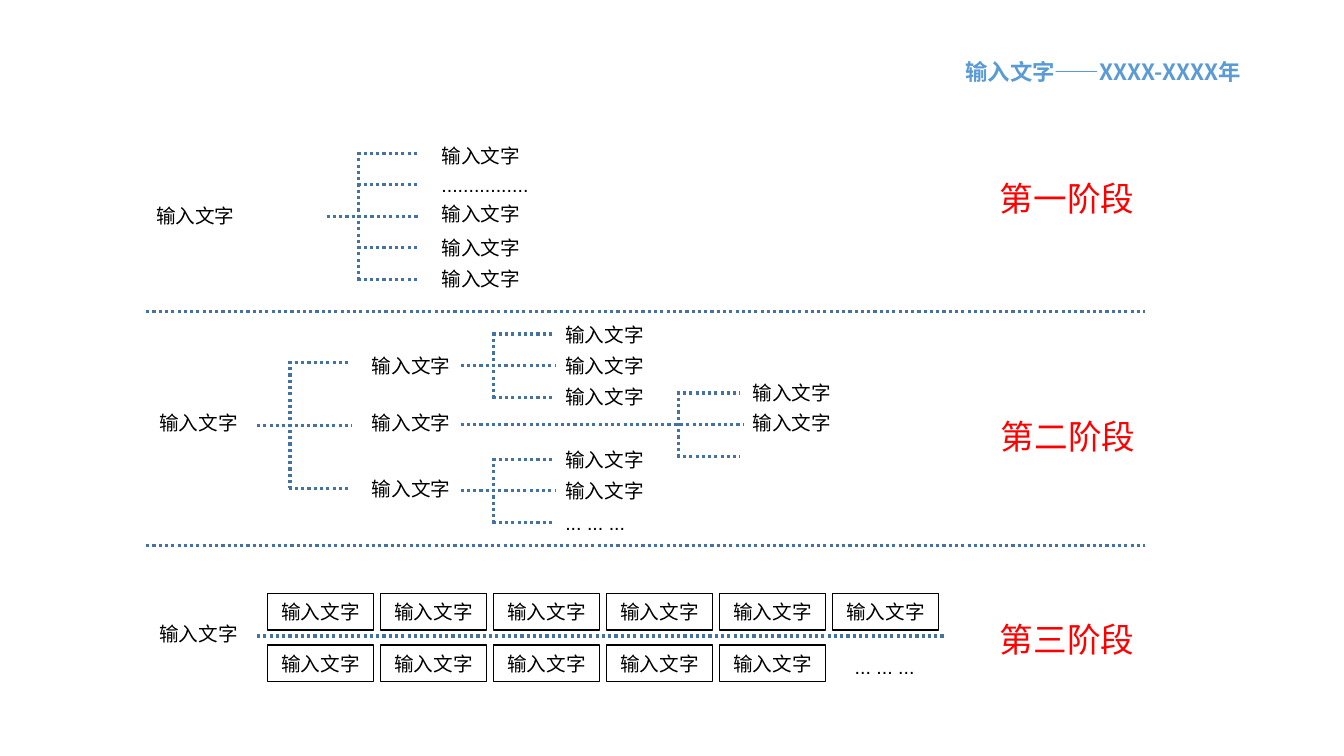
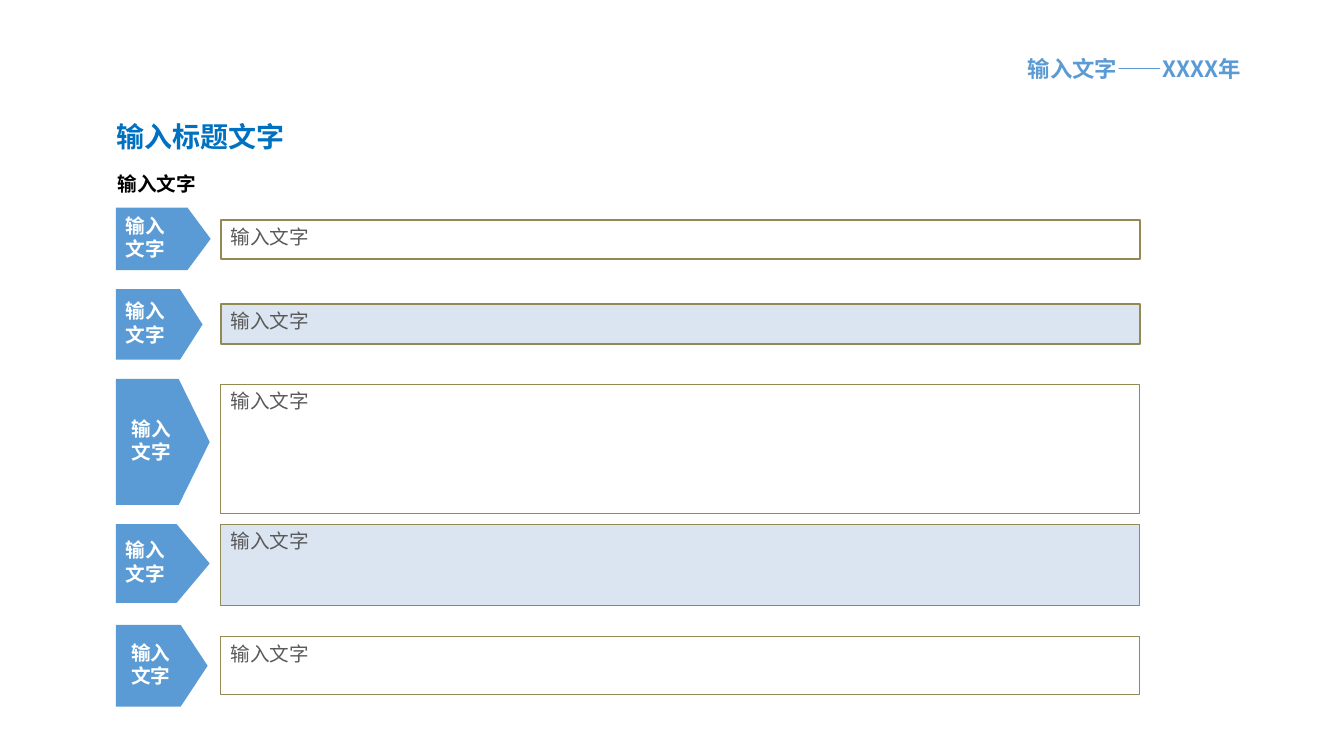
from dataclasses import dataclass
from lxml.etree import SubElement
from pptx import Presentation
from pptx.dml.color import RGBColor
from pptx.enum.dml import MSO_LINE
from pptx.enum.shapes import MSO_CONNECTOR, MSO_SHAPE
from pptx.enum.text import MSO_ANCHOR, MSO_AUTO_SIZE, PP_ALIGN
from pptx.oxml.ns import qn
from pptx.util import Pt


@dataclass(frozen=True)
class Style:
    size: int
    color: str
    font: str = "Noto Sans CJK SC"
    bold: bool = False


@dataclass(frozen=True)
class Theme:
    east_asian: str = "Noto Sans CJK SC"
    header: Style = Style(16, "5B9BD5", bold=True)
    title: Style = Style(20, "0070C0", bold=True)
    subtitle: Style = Style(14, "000000", bold=True)
    label: Style = Style(14, "000000", "Arial")
    stage: Style = Style(24, "FF0000", "Noto Sans CJK JP")
    step: Style = Style(14, "FFFFFF", bold=True)
    detail: Style = Style(14, "595959")
    dotted: str = "43739E"
    frame: str = "000000"
    arrow: str = "5B9BD5"
    border: str = "938953"
    white: str = "FFFFFF"
    tint: str = "DAE5F1"


THEME = Theme()
WORD = "输入文字"
ELLIPSIS = "... ... ..."
LINE_HEIGHT = 24.5

STAGES = [("第一阶段", 671, 109.4), ("第二阶段", 671.8, 279.4), ("第三阶段", 671, 424.1)]
STAGE_WIDTH, STAGE_HEIGHT, STAGE_INSET = 152, 51.1, 43.2
RULES = [(104.4, 817.9, 222.5), (104.4, 817.9, 389.5), (183.6, 675.4, 454.3)]

BRACKET_PARTS = ("start", "end", "middle", "spine", "offsets")
BRACKETS = [dict(zip(BRACKET_PARTS, values)) for values in [
    (233.3, 300, 154.6, 256.3, (-45, -22.5, 22.5, 45)),
    (183.6, 251.3, 303.8, 207.2, (-45, 45)),
    (329, 396.7, 261.2, 352.8, (-22.6, 22.6)),
    (329, 396.7, 350.6, 352.8, (-22.6, 22.6)),
    (329, 530.6, 303.3, 484.4, (-22.6, 22.6)),
]]
LABELS = [
    (104.4, [(141.8, WORD)]),
    (308.2, [(99.4, WORD), (120.2, "................"), (140.4, WORD),
             (164.9, WORD), (187.2, WORD)]),
    (106.6, [(290.2, WORD), (440.6, WORD)]),
    (258.5, [(249.1, WORD), (290.2, WORD), (337, WORD)]),
    (396.7, [(226.8, WORD), (249.1, WORD), (271.4, WORD),
             (316.1, WORD), (338.4, WORD), (361.4, ELLIPSIS)]),
    (530.6, [(268.6, WORD), (290.2, WORD)]),
    (603.4, [(464.4, ELLIPSIS)]),
]
LABEL_WIDTHS = {WORD: 70.6, ELLIPSIS: 57.6}
BOX_ROWS = [(424.1, [WORD] * 6), (460.8, [WORD] * 5)]
BOX_LEFT, BOX_PITCH, BOX_WIDTH, BOX_HEIGHT = 191.2, 80.7, 75.6, 25.9

STEPS = [
    {"arrow": (148.3, 67.7, 44.6), "point": 0.37, "inset": 7.2,
     "panel": (157, 28.1), "fill": THEME.white, "weight": 1.5},
    {"arrow": (206.6, 61.9, 50.4), "point": 0.32, "inset": 7.2,
     "panel": (217.4, 28.1), "fill": THEME.tint, "weight": 1.5},
    {"arrow": (270.7, 67, 90), "point": 0.33, "inset": 11.5,
     "panel": (274.3, 92.2), "fill": THEME.white, "weight": 0.75},
    {"arrow": (374.4, 67, 56.2), "point": 0.42, "inset": 7.2,
     "panel": (374.4, 58.3), "fill": THEME.tint, "weight": 0.75},
    {"arrow": (446.4, 65.5, 58.3), "point": 0.33, "inset": 10.8,
     "panel": (455, 41), "fill": THEME.white, "weight": 0.75},
]
ARROW_LEFT, PANEL_LEFT, PANEL_WIDTH = 82.8, 157.7, 656.6


def rgb(value):
    return RGBColor.from_string(value)


def write(frame, text, style, align=PP_ALIGN.LEFT):
    paragraph = frame.paragraphs[0]
    paragraph.text = text
    paragraph.alignment = align
    font = paragraph.font
    font.size, font.bold, font.name = Pt(style.size), style.bold, style.font
    font.color.rgb = rgb(style.color)
    defaults = paragraph._p.pPr.find(qn("a:defRPr"))
    SubElement(defaults, qn("a:ea")).set("typeface", THEME.east_asian)


def add_text(slide, text, left, top, width, height, style, wrap=False):
    frame = slide.shapes.add_textbox(Pt(left), Pt(top), Pt(width), Pt(height)).text_frame
    frame.word_wrap = wrap
    frame.auto_size = MSO_AUTO_SIZE.SHAPE_TO_FIT_TEXT
    write(frame, text, style)
    return frame


def add_block(slide, kind, left, top, width, height, fill=None, border=None, weight=1):
    block = slide.shapes.add_shape(kind, Pt(left), Pt(top), Pt(width), Pt(height))
    block.shadow.inherit = False
    if fill:
        block.fill.solid()
        block.fill.fore_color.rgb = rgb(fill)
    else:
        block.fill.background()
    if border:
        block.line.color.rgb = rgb(border)
        block.line.width = Pt(weight)
    else:
        block.line.fill.background()
    block.text_frame.word_wrap = True
    return block


def add_dotted(slide, x1, y1, x2, y2):
    dotted = slide.shapes.add_connector(
        MSO_CONNECTOR.STRAIGHT, Pt(x1), Pt(y1), Pt(x2), Pt(y2))
    dotted.line.color.rgb = rgb(THEME.dotted)
    dotted.line.width = Pt(2.25)
    dotted.line.dash_style = MSO_LINE.ROUND_DOT
    SubElement(dotted._element.spPr, qn("a:effectLst"))


def add_bracket(slide, start, end, middle, spine, offsets):
    add_dotted(slide, start, middle, end, middle)
    add_dotted(slide, spine, middle + offsets[0] - 1, spine, middle + offsets[-1])
    for offset in offsets:
        add_dotted(slide, spine - 1, middle + offset, end - 2, middle + offset)


def new_slide(deck, header, left, top, width):
    slide = deck.slides.add_slide(deck.slide_layouts[6])
    add_text(slide, header, left, top, width, 26.6, THEME.header)
    return slide


def build_stages(deck):
    slide = new_slide(deck, "输入文字——XXXX-XXXX年", 682.6, 38.2, 225.4)
    for start, end, height in RULES:
        add_dotted(slide, start, height, end, height)
    for bracket in BRACKETS:
        add_bracket(slide, **bracket)
    for left, entries in LABELS:
        for top, text in entries:
            add_text(slide, text, left, top, LABEL_WIDTHS.get(text, 77),
                     LINE_HEIGHT, THEME.label)
    for top, texts in BOX_ROWS:
        for column, text in enumerate(texts):
            box = add_block(slide, MSO_SHAPE.RECTANGLE, BOX_LEFT + column * BOX_PITCH,
                            top, BOX_WIDTH, BOX_HEIGHT, border=THEME.frame)
            write(box.text_frame, text, THEME.label, PP_ALIGN.CENTER)
    for text, left, top in STAGES:
        stage = add_text(slide, text, left, top, STAGE_WIDTH, STAGE_HEIGHT, THEME.stage)
        stage.margin_left = Pt(STAGE_INSET)
        stage.paragraphs[0].line_spacing = 1.5


def build_steps(deck):
    slide = new_slide(deck, "输入文字——XXXX年", 727.2, 36, 184)
    add_text(slide, "输入标题文字", 76.3, 82.1, 303.1, 31.7, THEME.title, wrap=True)
    add_text(slide, WORD, 77, 119.5, 566.6, LINE_HEIGHT, THEME.subtitle, wrap=True)
    for step in STEPS:
        top, width, height = step["arrow"]
        arrow = add_block(slide, MSO_SHAPE.PENTAGON, ARROW_LEFT, top, width, height,
                          THEME.arrow)
        arrow.adjustments[0] = step["point"]
        arrow.text_frame.margin_left = Pt(step["inset"])
        arrow.text_frame.margin_right = Pt(12)
        arrow.text_frame.margin_bottom = Pt(6)
        write(arrow.text_frame, WORD, THEME.step)
        top, height = step["panel"]
        panel = add_block(slide, MSO_SHAPE.RECTANGLE, PANEL_LEFT, top, PANEL_WIDTH,
                          height, step["fill"], THEME.border, step["weight"])
        panel.text_frame.vertical_anchor = MSO_ANCHOR.TOP
        write(panel.text_frame, WORD, THEME.detail)


def main():
    deck = Presentation()
    deck.slide_width, deck.slide_height = Pt(960), Pt(540)
    build_stages(deck)
    build_steps(deck)
    deck.save("out.pptx")


if __name__ == "__main__":
    main()
